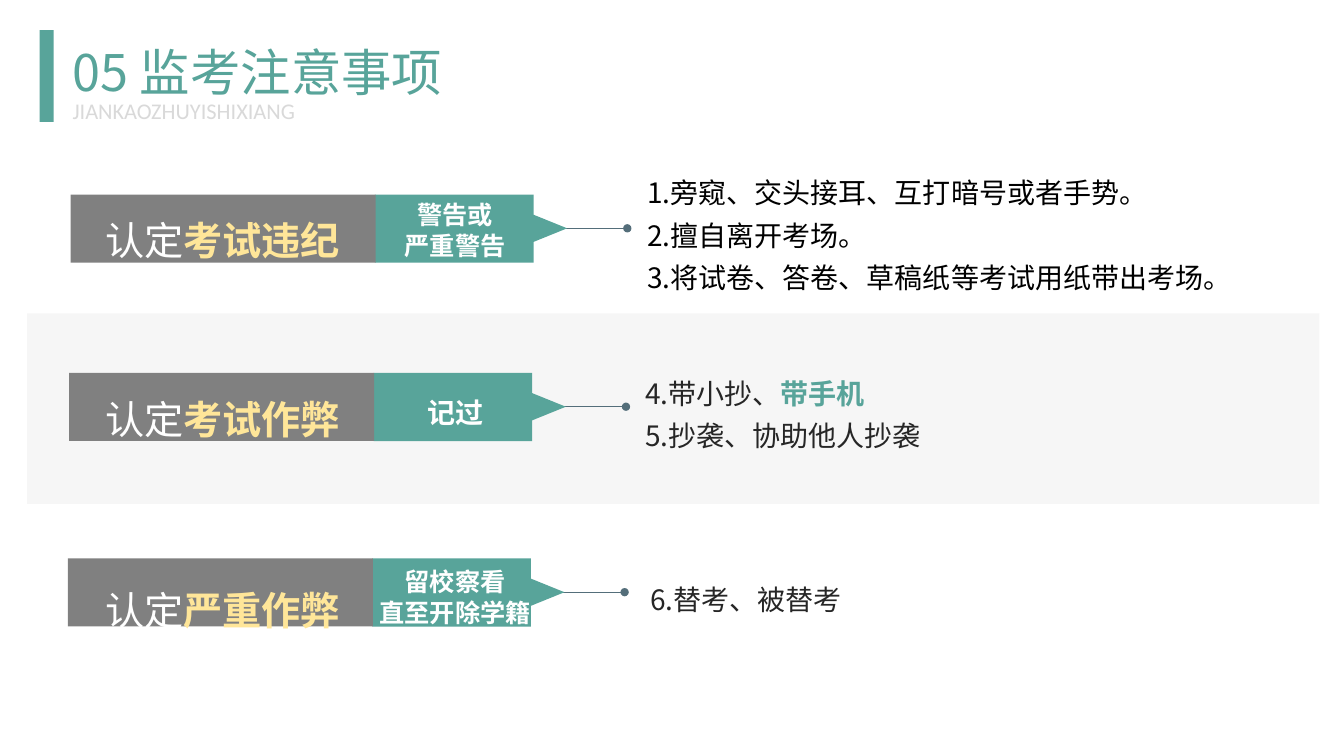
from dataclasses import dataclass

from pptx import Presentation
from pptx.dml.color import RGBColor
from pptx.enum.shapes import MSO_CONNECTOR, MSO_SHAPE
from pptx.enum.text import MSO_ANCHOR, MSO_AUTO_SIZE, PP_ALIGN
from pptx.oxml.ns import qn
from pptx.util import Inches, Pt
from lxml import etree

RECT = MSO_SHAPE.RECTANGLE
STRAIGHT = MSO_CONNECTOR.STRAIGHT
TOP = MSO_ANCHOR.TOP
NO_FIT = MSO_AUTO_SIZE.NONE
LEFT, CENTER, JUSTIFY = PP_ALIGN.LEFT, PP_ALIGN.CENTER, PP_ALIGN.JUSTIFY

COLUMNS, ROWS = 40, 30
COMPARISON_LAYOUT = 4


@dataclass(frozen=True)
class Theme:
    font: str = "Noto Sans CJK SC"
    caption_font: str = "Calibri"
    teal: str = "58A49A"
    gray: str = "808080"
    yellow: str = "FFE699"
    slate: str = "546E7A"
    white: str = "FFFFFF"
    black: str = "000000"
    ink: str = "262626"
    pale: str = "D9D9D9"
    title: int = 36
    heading: int = 28
    body: int = 20
    label: int = 18
    caption: int = 16
    line_height: float = 1.22


@dataclass(frozen=True)
class Offence:
    left: float
    top: float
    name: str
    name_top: float
    penalty: tuple
    penalty_size: int
    penalty_top: float
    list_left: float
    list_top: float
    list_rows: float
    acts: tuple


class Deck:
    """Style, grid and current slide."""

    def __init__(self, prs, theme):
        self.theme = theme
        self.col = prs.slide_width / COLUMNS
        self.row = prs.slide_height / ROWS
        self.slide = prs.slides.add_slide(prs.slide_layouts[COMPARISON_LAYOUT])
        self.shapes = self.slide.shapes

    def place(self, *cells):
        """Turn alternating columns and rows into lengths."""
        units = (self.col, self.row) * 2
        return [round(c * u) for c, u in zip(cells, units)]

    def paint(self, sp, color):
        sp.shadow.inherit = False
        sp.fill.solid()
        sp.fill.fore_color.rgb = RGBColor.from_string(color)
        sp.line.fill.background()
        return sp

    def rect(self, box, color):
        return self.paint(self.shapes.add_shape(RECT, *self.place(*box)), color)

    def band(self, box, color, opacity):
        """Draw a see-through strip behind everything else."""
        sp = self.rect(box, color)
        clr = sp._element.spPr.find(qn("a:solidFill"))[0]
        etree.SubElement(clr, qn("a:alpha")).set("val", str(opacity * 1000))
        self.shapes._spTree.insert(2, sp._element)

    def tag(self, left, top, width, height):
        """Draw a box with a pointer on its right side."""
        right = left + width
        box = [(left, top), (right, top), (right, top + height), (left, top + height)]
        pointer = [(right, top + 0.8), (right, top + 1.88), (right + 1, top + 1.34)]
        builder = self.shapes.build_freeform(*self.place(*box[0]))
        builder.add_line_segments([self.place(*pt) for pt in box[1:]])
        builder.move_to(*self.place(*pointer[0]))
        builder.add_line_segments([self.place(*pt) for pt in pointer[1:]])
        self.paint(builder.convert_to_shape(), self.theme.teal)

    def dotted_end_line(self, left, right, y):
        line = self.shapes.add_connector(STRAIGHT, *self.place(left, y, right, y))
        line.line.color.rgb = RGBColor.from_string(self.theme.slate)
        line.line.width = Pt(0.75)
        spPr = line._element.spPr
        etree.SubElement(spPr.find(qn("a:ln")), qn("a:tailEnd")).set("type", "oval")
        etree.SubElement(spPr, qn("a:effectLst"))

    def text_box(self, box, paragraphs, **fmt):
        self.set_text(self.shapes.add_textbox(*self.place(*box)), paragraphs, **fmt)

    def placeholder(self, idx, box, paragraphs, **fmt):
        sp = self.slide.placeholders[idx]
        sp.left, sp.top, sp.width, sp.height = self.place(*box)
        self.set_text(sp, paragraphs, **fmt)

    def set_text(self, sp, paragraphs, *, size, color, align=LEFT, spacing=1.0,
                 font=None, bold=False, inset=(0, 0)):
        """Fill a shape; each paragraph is a list of (text, overrides) runs."""
        tf = sp.text_frame
        tf.word_wrap, tf.auto_size, tf.vertical_anchor = True, NO_FIT, TOP
        tf.margin_left = tf.margin_right = Inches(inset[0])
        tf.margin_top = tf.margin_bottom = Inches(inset[1])
        for i, runs in enumerate(paragraphs):
            p = tf.add_paragraph() if i else tf.paragraphs[0]
            p.alignment = align
            p.space_before = p.space_after = Pt(0)
            p.line_spacing = Pt(round(size * self.theme.line_height * spacing, 1))
            if sp.is_placeholder:
                pPr = p._p.get_or_add_pPr()
                pPr.set("marL", "0")
                pPr.set("indent", "0")
                etree.SubElement(pPr, qn("a:buNone"))
            for text, own in runs:
                r = p.add_run()
                r.text = text
                r.font.size = Pt(size)
                r.font.bold = own.get("bold", bold)
                r.font.color.rgb = RGBColor.from_string(own.get("color", color))
                r.font.name = font or self.theme.font
                ea = etree.SubElement(r._r.get_or_add_rPr(), qn("a:ea"))
                ea.set("typeface", r.font.name)

    def offence(self, idx, o, ink):
        """Draw one row: name, penalty, pointer line and list of acts."""
        t = self.theme
        self.dotted_end_line(o.left + 14.55, o.left + 16.57, o.top + 1.34)
        self.tag(o.left + 9.06, o.top, 4.72, 2.7)
        self.rect((o.left, o.top, 9.08, 2.7), t.gray)
        name = [("认定", {}), (o.name, {"color": t.yellow, "bold": True})]
        self.text_box((2.08, o.name_top, 9.09, 2.56), [name], size=t.heading,
                      color=t.white, align=CENTER, spacing=1.5)
        self.text_box((11.16, o.penalty_top, 4.77, 2.44),
                      [[(line, {})] for line in o.penalty],
                      size=o.penalty_size, color=t.white, align=CENTER, bold=True)
        self.placeholder(idx, (o.list_left, o.list_top, 19.92, o.list_rows), o.acts,
                         size=t.body, color=ink, align=JUSTIFY, spacing=1.25)


def main():
    prs = Presentation()
    prs.slide_width, prs.slide_height = Inches(13.33), Inches(7.5)
    t = Theme()
    deck = Deck(prs, t)

    deck.band((0.81, 12.44, 38.46, 7.56), t.gray, 7)
    deck.rect((1.18, 1.2, 0.42, 3.64), t.teal)
    deck.placeholder(0, (1.86, 1.4, 15.27, 2.8), [[("05 监考注意事项", {})]],
                     size=t.title, color=t.teal, inset=(0.1, 0.05))
    deck.placeholder(1, (1.86, 3.64, 11.4, 1.48), [[("JIANKAOZHUYISHIXIANG", {})]],
                     size=t.caption, color=t.pale, font=t.caption_font,
                     align=JUSTIFY, inset=(0.1, 0.05))

    phone = {"color": t.teal, "bold": True}
    offences = [
        (Offence(2.1, 7.72, "考试违纪", 7.6, ("警告或", "严重警告"), t.label, 7.88,
                 19.26, 6.6, 5,
                 ([("1.旁窥、交头接耳、互打暗号或者手势。", {})],
                  [("2.擅自离开考场。", {})],
                  [("3.将试卷、答卷、草稿纸等考试用纸带出考场。", {})])), t.black),
        (Offence(2.06, 14.8, "考试作弊", 14.72, ("记过",), t.body, 15.68,
                 19.2, 14.56, 5,
                 ([("4.带小抄、", {}), ("带手机", phone)],
                  [("5.抄袭、协助他人抄袭", {})])), t.ink),
        (Offence(2.02, 22.16, "严重作弊", 22.28, ("留校察看", "直至开除学籍"), t.label,
                 22.44, 19.35, 22.76, 1.6,
                 ([("6.替考、被替考", {})],)), t.ink),
    ]
    for idx, (offence, ink) in enumerate(offences, start=2):
        deck.offence(idx, offence, ink)

    prs.save("out.pptx")


if __name__ == "__main__":
    main()
